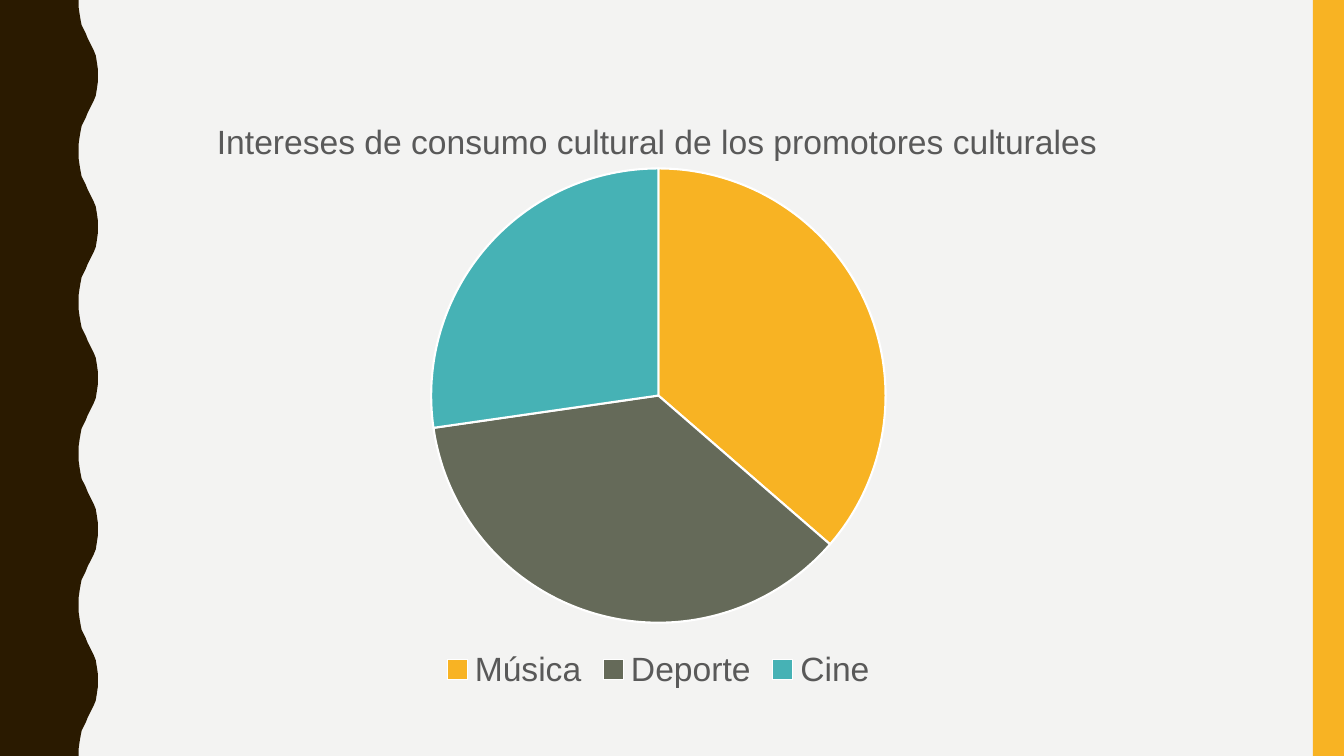
from lxml import etree
from pptx import Presentation
from pptx.chart.data import CategoryChartData
from pptx.dml.color import RGBColor
from pptx.enum.chart import XL_CHART_TYPE, XL_LEGEND_POSITION
from pptx.enum.shapes import MSO_SHAPE
from pptx.oxml.ns import qn
from pptx.util import Emu, Pt

PIE = XL_CHART_TYPE.PIE
LEGEND_BOTTOM = XL_LEGEND_POSITION.BOTTOM
RECTANGLE = MSO_SHAPE.RECTANGLE

EMU_PER_PX = 9144  # 100 px to the inch
SLIDE_WIDTH, SLIDE_HEIGHT = 1333, 750
BLANK_LAYOUT = 6

BACKGROUND = "F3F3F2"
BROWN = "2A1A00"
AMBER = "F8B323"
WHITE = "FFFFFF"
CHART_TEXT = {"name": "Arial", "size": Pt(24), "bold": False}
TEXT_COLOR = "595959"

CHART_TITLE = "Intereses de consumo cultural de los promotores culturales"
INTERESTS = [("Música", 36, AMBER), ("Deporte", 36, "656A59"), ("Cine", 27, "46B2B5")]

# Half a wave of the left band, from trough to crest
WAVE_PERIOD = 150
HALF_WAVE = [(78, 0), (78, 7), (79, 14), (80, 20), (81, 25), (83, 29), (85, 33),
             (87, 38), (89, 42), (91, 46), (93, 50), (95, 55), (96, 61), (97, 68),
             (97, 75)]


def px(length):
    return Emu(length * EMU_PER_PX)


def color(hex_string):
    return RGBColor.from_string(hex_string)


def paint(shape, fill):
    shape.fill.solid()
    shape.fill.fore_color.rgb = color(fill)
    shape.line.fill.background()
    shape.shadow.inherit = False


def format_font(font):
    for name, value in CHART_TEXT.items():
        setattr(font, name, value)
    font.color.rgb = color(TEXT_COLOR)


def add_wavy_band(slide, fill):
    # The second half of each wave mirrors the first
    wave = HALF_WAVE + [(x, WAVE_PERIOD - y) for x, y in HALF_WAVE[-2::-1]]
    edge = [(x, y + top) for top in range(0, SLIDE_HEIGHT, WAVE_PERIOD) for x, y in wave]
    builder = slide.shapes.build_freeform(0, 0, scale=EMU_PER_PX)
    builder.add_line_segments(edge + [(0, SLIDE_HEIGHT)], close=True)
    paint(builder.convert_to_shape(), fill)


def add_bar(slide, left, top, width, height, fill):
    bar = slide.shapes.add_shape(RECTANGLE, px(left), px(top), px(width), px(height))
    paint(bar, fill)


def place_chart_part(part, index, values):
    """Give a chart part a manual layout, in fractions of the chart."""
    for automatic in part.findall(qn("c:layout")):
        part.remove(automatic)
    layout = etree.Element(qn("c:layout"))
    manual = etree.SubElement(layout, qn("c:manualLayout"))
    for name, value in values.items():
        etree.SubElement(manual, qn(f"c:{name}")).set("val", str(value))
    part.insert(index, layout)


def add_pie(slide, left, top, width, height):
    data = CategoryChartData()
    data.categories = [name for name, _, _ in INTERESTS]
    data.add_series("Series 1", [value for _, value, _ in INTERESTS])
    chart = slide.shapes.add_chart(
        PIE, px(left), px(top), px(width), px(height), data).chart
    format_font(chart.font)

    # Title
    chart.has_title = True
    paragraph = chart.chart_title.text_frame.paragraphs[0]
    run = paragraph.add_run()
    run.text = CHART_TITLE
    format_font(run.font)

    # Legend
    chart.has_legend = True
    chart.legend.position = LEGEND_BOTTOM
    chart.legend.include_in_layout = False
    format_font(chart.legend.font)

    # Slices
    plot = chart.plots[0]
    plot.vary_by_categories = True
    for index, (_, _, fill) in enumerate(INTERESTS):
        slice_format = plot.series[0].points[index].format
        slice_format.fill.solid()
        slice_format.fill.fore_color.rgb = color(fill)
        slice_format.line.color.rgb = color(WHITE)
        slice_format.line.width = Pt(1.5)

    # Positions of the title and the pie
    place_chart_part(chart.chart_title.element, 1,
                     {"xMode": "edge", "yMode": "edge", "x": 0.11, "y": 0.04})
    plot_area = chart.element.find(".//" + qn("c:plotArea"))
    place_chart_part(plot_area, 0,
                     {"layoutTarget": "inner", "xMode": "edge", "yMode": "edge",
                      "x": 0.3, "y": 0.13, "w": 0.4, "h": 0.75})


def main():
    presentation = Presentation()
    presentation.slide_width = px(SLIDE_WIDTH)
    presentation.slide_height = px(SLIDE_HEIGHT)
    slide = presentation.slides.add_slide(presentation.slide_layouts[BLANK_LAYOUT])
    slide.background.fill.solid()
    slide.background.fill.fore_color.rgb = color(BACKGROUND)

    # Side bands
    add_wavy_band(slide, BROWN)
    add_bar(slide, 1302, 0, 31, SLIDE_HEIGHT, AMBER)

    # Survey results
    add_pie(slide, 84, 89, 1138, 601)

    presentation.save("out.pptx")


if __name__ == "__main__":
    main()
